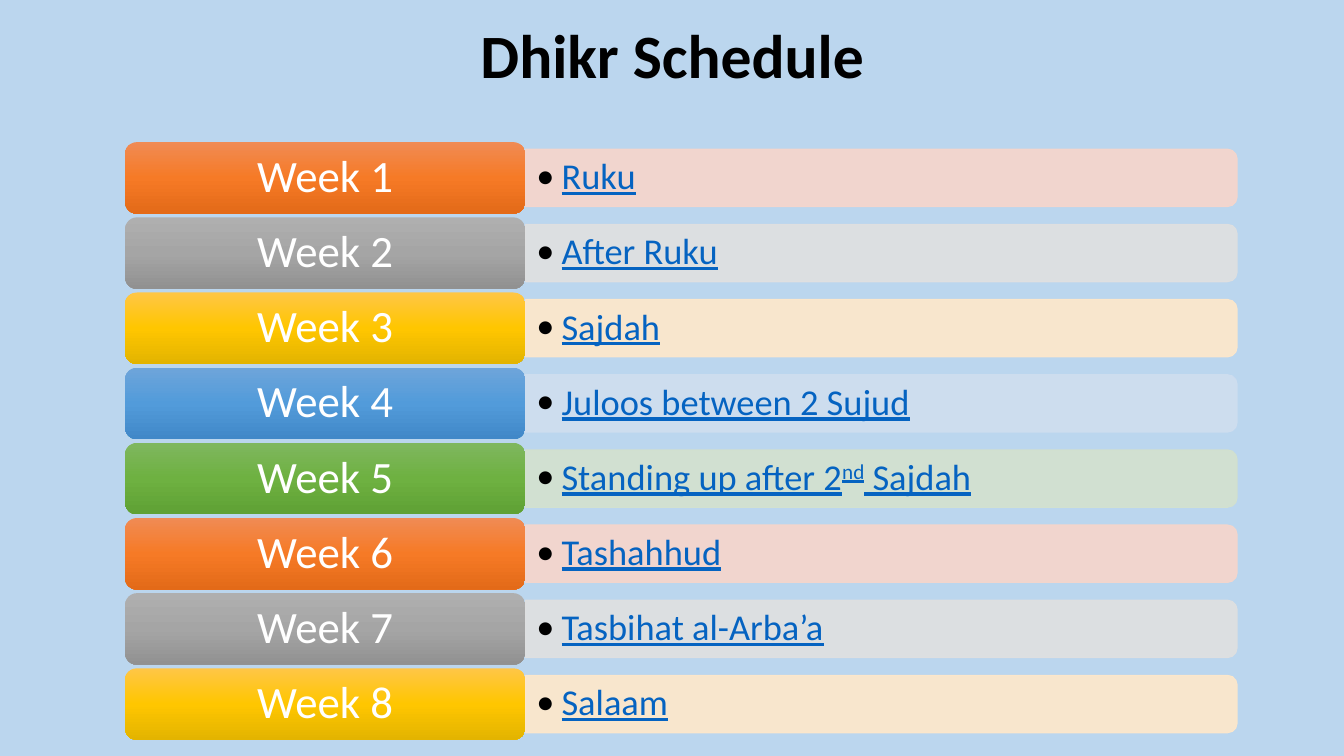
from copy import deepcopy
from pptx import Presentation
from pptx.dml.color import RGBColor
from pptx.enum.shapes import MSO_SHAPE
from pptx.enum.text import MSO_ANCHOR, PP_ALIGN
from pptx.oxml import parse_xml
from pptx.oxml.ns import nsdecls, qn
from pptx.util import Inches, Pt

ROUND = MSO_SHAPE.ROUNDED_RECTANGLE
HALF = MSO_SHAPE.ROUND_2_SAME_RECTANGLE
MIDDLE = MSO_ANCHOR.MIDDLE
CENTER, LEFT = PP_ALIGN.CENTER, PP_ALIGN.LEFT

TITLE = "Dhikr Schedule"
TOPICS = [
    ["Ruku"],
    ["After Ruku"],
    ["Sajdah"],
    ["Juloos between 2 Sujud"],
    ["Standing up after 2", "nd", " Sajdah"],
    ["Tashahhud"],
    ["Tasbihat al-Arba’a"],
    ["Salaam"],
]
THEMES = [
    ("F7D5CB", ("F08B54", "F67A26", "E36A18")),
    ("E0E0E0", ("AFAFAF", "A5A5A5", "919191")),
    ("FFE8CA", ("FFC647", "FFC600", "E3B400")),
    ("CFDEEF", ("6EA5DA", "529BDA", "4188C8")),
    ("D4E2CE", ("7FB75F", "6EB141", "5FA134")),
]
TILE_X, TILE_W, TILE_H = 1.24, 3.97, 0.71
FIRST, LAST = 1.41, 6.63
BAR_W, BAR_H = 7.06, 0.57
NOTE_W, NOTE_H = 7.03, 0.51
STEP = (LAST - FIRST) / (len(TOPICS) - 1)
BAR_X = TILE_X + TILE_W


def paint(color, hue):
    color.rgb = RGBColor.from_string(hue)


def write(shape, runs, size, hue, pad, bold=None, line=None, align=CENTER, bullet=False):
    frame = shape.text_frame
    frame.word_wrap = True
    frame.vertical_anchor = MIDDLE
    frame.margin_left = frame.margin_right = Inches(pad[0])
    frame.margin_top = frame.margin_bottom = Inches(pad[1])
    para = frame.paragraphs[0]
    para.alignment = align
    para.line_spacing = 0.9
    if bullet:
        para.level = 1
        props = para._p.get_or_add_pPr()
        props.set("marL", str(Inches(0.25)))
        props.set("indent", str(Inches(-0.25)))
        for mark in ('<a:buClr %s><a:srgbClr val="000000"/></a:buClr>',
                     '<a:buFont %s typeface="Calibri"/>',
                     '<a:buChar %s char="•"/>'):
            props.append(parse_xml(mark % nsdecls("a")))
    for spot, text in enumerate(runs):
        run = para.add_run()
        run.text = text
        font = run.font
        font.name, font.size = "Calibri", Pt(size)
        font.bold, font.underline = bold, line
        paint(font.color, hue)
        if spot == 1:
            run._r.get_or_add_rPr().set("baseline", "30000")


def add_box(x, y, w, h):
    return slide.shapes.add_textbox(Inches(x), Inches(y), Inches(w), Inches(h))


def add_form(kind, x, y, w, h):
    form = slide.shapes.add_shape(kind, Inches(x), Inches(y), Inches(w), Inches(h))
    form.shadow.inherit = False
    form.adjustments[0] = 0.167
    return form


def add_bar(mid, hue):
    bar = add_form(HALF, BAR_X + (BAR_W - BAR_H) / 2, mid - BAR_W / 2, BAR_H, BAR_W)
    bar.rotation = 90
    bar.fill.solid()
    paint(bar.fill.fore_color, hue)
    paint(bar.line.color, hue)
    bar.line.width = Pt(0.75)
    for color in bar._element.spPr.iter(qn("a:srgbClr")):
        color.append(parse_xml('<a:alpha %s val="90000"/>' % nsdecls("a")))


def add_tile(mid, hues):
    tile = add_form(ROUND, TILE_X, mid - TILE_H / 2, TILE_W, TILE_H)
    tile.line.fill.background()
    tile.fill.gradient()
    tile.fill.gradient_angle = 270
    stops = next(tile._element.spPr.iter(qn("a:gsLst")))
    stops.insert(1, deepcopy(stops[0]))
    for stop, place, hue in zip(tile.fill.gradient_stops, (0, 0.5, 1), hues):
        stop.position = place
        paint(stop.color, hue)
    return tile


deck = Presentation()
deck.slide_width, deck.slide_height = Inches(13.33), Inches(7.5)
slide = deck.slides.add_slide(deck.slide_layouts[6])
slide.background.fill.solid()
paint(slide.background.fill.fore_color, "BBD6EE")

write(add_box(0.92, 0, 11.5, 1.17), [TITLE], 44, "000000", (0.1, 0.05), bold=True)

for row, topic in enumerate(TOPICS):
    pale, hues = THEMES[row % len(THEMES)]
    mid = FIRST + row * STEP + TILE_H / 2
    add_bar(mid, pale)
    note = add_box(BAR_X, mid - NOTE_H / 2, NOTE_W, NOTE_H)
    write(note, topic, 26, "0563C1", (0.11, 0.05), line=True, align=LEFT, bullet=True)
    write(add_tile(mid, hues), [f"Week {row + 1}"], 32, "FFFFFF", (0.13, 0.07))

deck.save("out.pptx")
